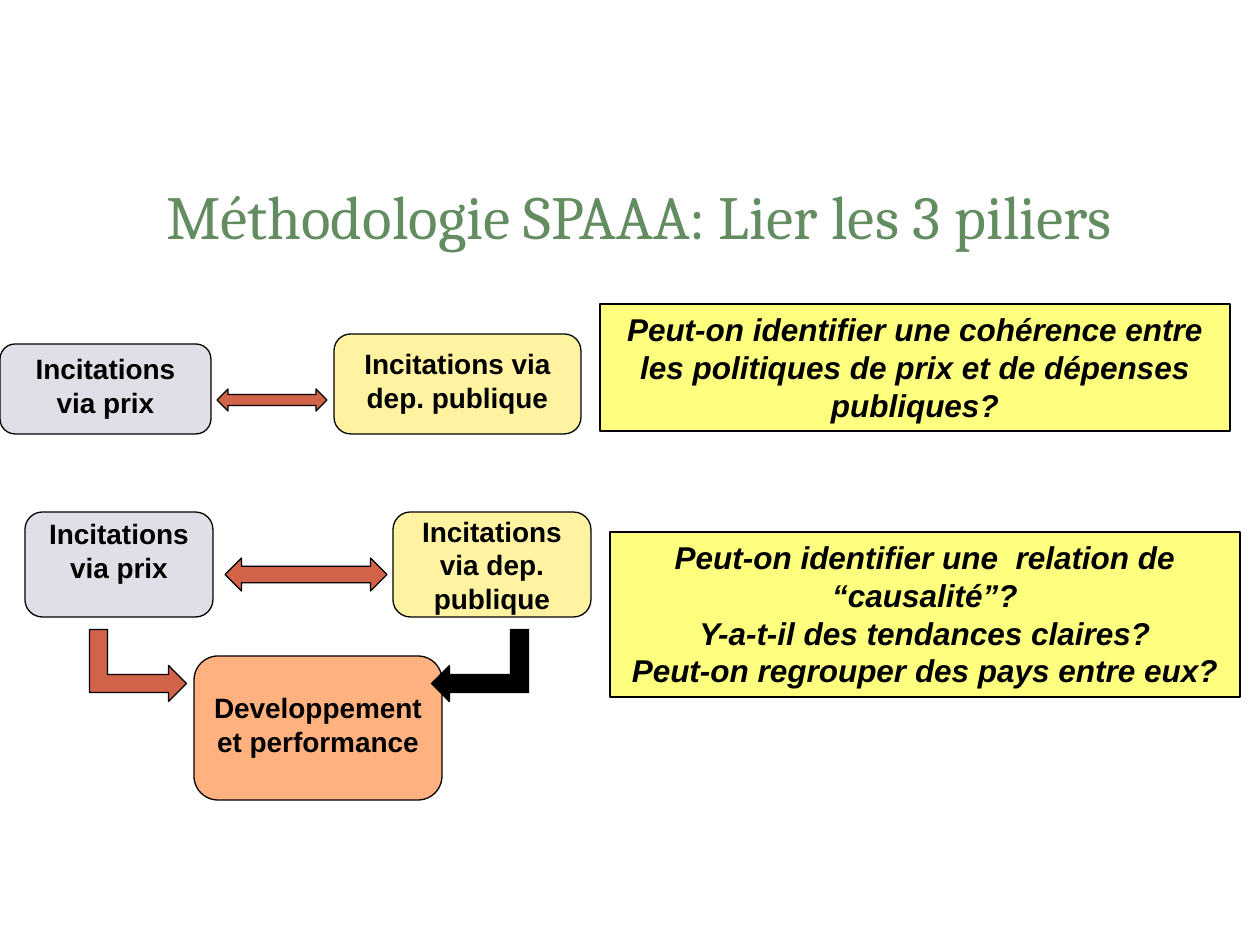
from lxml import etree
from pptx import Presentation
from pptx.dml.color import RGBColor
from pptx.enum.shapes import MSO_SHAPE
from pptx.enum.text import MSO_ANCHOR, PP_ALIGN
from pptx.oxml.ns import qn
from pptx.util import Emu, Pt

ROUND = MSO_SHAPE.ROUNDED_RECTANGLE
RECT = MSO_SHAPE.RECTANGLE
DOUBLE = MSO_SHAPE.LEFT_RIGHT_ARROW
BENT = MSO_SHAPE.BENT_UP_ARROW
MIDDLE, TOP = MSO_ANCHOR.MIDDLE, MSO_ANCHOR.TOP
CENTER = PP_ALIGN.CENTER

BLACK = RGBColor(0, 0, 0)
GREY = RGBColor(0xC0, 0xC3, 0xD0)
GOLD = RGBColor(0xFF, 0xE9, 0x47)
ORANGE = RGBColor(0xFF, 0x66, 0x00)
YELLOW = RGBColor(0xFF, 0xFF, 0x00)
RUST = RGBColor(0xD1, 0x63, 0x49)
GREEN = RGBColor(0x64, 0x8C, 0x61)

PRICE = "Incitations via prix"
SPEND = "Incitations via dep. publique"
TITLE = ("Méthodologie SPAAA: Lier les 3 piliers", (44, 165, 1191, 100))

PAIR = {
    "boxes": [
        (PRICE, GREY, (0, 344, 211, 90), 13),
        (SPEND, GOLD, (334, 334, 247, 100), 13),
    ],
    "double": (217, 389, 110, 22),
    "bends": [],
}
TRIO = {
    "boxes": [
        (PRICE, GREY, (25, 512, 188, 105), 34),
        (SPEND, GOLD, (393, 512, 198, 105), 6),
        ("Developpement et performance", ORANGE, (194, 656, 248, 144), 13),
    ],
    "double": (225, 558, 162, 33),
    "bends": [(RUST, (102, 617, 72, 97), False),
              (BLACK, (444, 617, 72, 97), True)],
}
NOTES = [
    (["Peut-on identifier une cohérence entre les politiques de prix "
      "et de dépenses publiques?"], (600, 304, 630, 127)),
    (["Peut-on identifier une  relation de “causalité”?",
      "Y-a-t-il des tendances claires?",
      "Peut-on regrouper des pays entre eux?"], (610, 532, 630, 165)),
]


def px(n):
    return Emu(round(n * 914400 / 126))


def draw(shapes, kind, spot, fill=None, clear=False):
    shape = shapes.add_shape(kind, *map(px, spot))
    shape.shadow.inherit = False
    if fill is None:
        shape.fill.background()
        shape.line.fill.background()
        return shape
    shape.fill.solid()
    shape.fill.fore_color.rgb = fill
    shape.line.color.rgb = BLACK
    shape.line.width = Pt(0.75)
    if clear:
        color = shape.fill._xPr.find(qn("a:solidFill"))[0]
        etree.SubElement(color, qn("a:alpha"), val="50000")
    return shape


def write(shape, lines, size, anchor=MIDDLE, face="Arial", color=BLACK,
          bold=True, slant=False, foot=6):
    frame = shape.text_frame
    frame.word_wrap = True
    frame.vertical_anchor = anchor
    frame.margin_top = px(6)
    frame.margin_bottom = px(foot)
    frame.text = "\n".join(lines)
    for para in frame.paragraphs:
        para.alignment = CENTER
        font = para.font
        font.name, font.size = face, Pt(size)
        font.bold, font.italic = bold, slant
        font.color.rgb = color


def chart(slide, parts):
    shapes = slide.shapes.add_group_shape().shapes
    for text, fill, spot, foot in parts["boxes"]:
        box = draw(shapes, ROUND, spot, fill, True)
        write(box, [text], 16, foot=foot)
    draw(shapes, DOUBLE, parts["double"], RUST)
    for fill, spot, flip in parts["bends"]:
        bend = draw(shapes, BENT, spot, fill)
        bend.rotation = 90
        if flip:
            bend._element.spPr.find(qn("a:xfrm")).set("flipV", "1")


def main():
    deck = Presentation()
    deck.slide_width, deck.slide_height = px(1260), px(945)
    slide = deck.slides.add_slide(deck.slide_layouts[6])
    for parts in (PAIR, TRIO):
        chart(slide, parts)
    for lines, spot in NOTES:
        note = draw(slide.shapes, RECT, spot, YELLOW, True)
        write(note, lines, 18, TOP, slant=True)
    text, spot = TITLE
    head = draw(slide.shapes, ROUND, spot)
    write(head, [text], 35, face="Cambria", color=GREEN, bold=False)
    deck.save("out.pptx")


if __name__ == "__main__":
    main()
